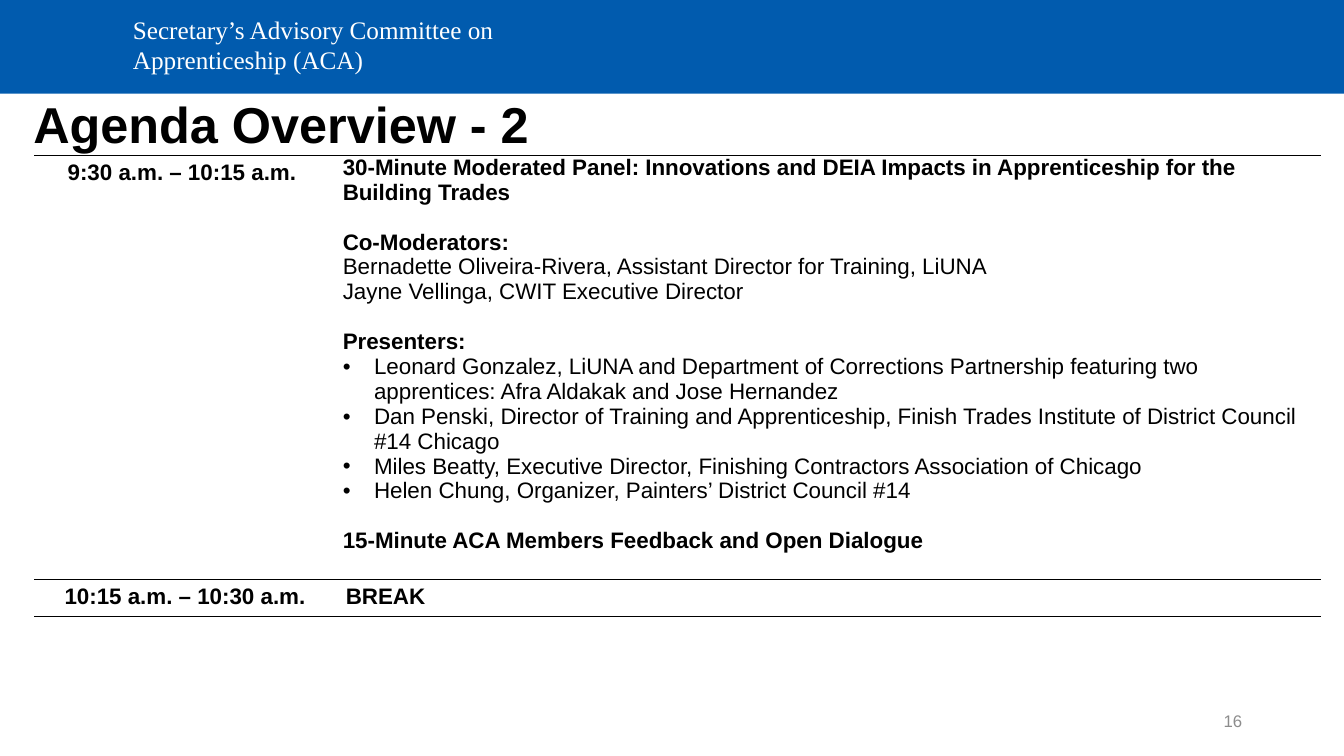
from lxml import etree
from pptx import Presentation
from pptx.dml.color import RGBColor
from pptx.enum.shapes import MSO_SHAPE
from pptx.enum.text import MSO_ANCHOR, MSO_AUTO_SIZE, PP_ALIGN
from pptx.oxml.ns import qn
from pptx.util import Inches, Pt

BLUE = RGBColor(0x01, 0x5B, 0xAE)
WHITE = RGBColor(0xFF, 0xFF, 0xFF)
BLACK = RGBColor(0x00, 0x00, 0x00)
GRAY = RGBColor(0x8C, 0x8C, 0x8C)
PLAIN_TABLE_STYLE = "{2D5ABB26-0587-4C30-8999-92F81FD0307C}"

# Each group: bold heading, plain lines, bulleted lines
PANEL = [
    ("30-Minute Moderated Panel: Innovations and DEIA Impacts in "
     "Apprenticeship for the Building Trades", [], []),
    ("Co-Moderators:", [
        "Bernadette Oliveira-Rivera, Assistant Director for Training, LiUNA",
        "Jayne Vellinga, CWIT Executive Director",
    ], []),
    ("Presenters:", [], [
        "Leonard Gonzalez, LiUNA and Department of Corrections Partnership "
        "featuring two apprentices: Afra Aldakak and Jose Hernandez",
        "Dan Penski, Director of Training and Apprenticeship, Finish Trades "
        "Institute of District Council #14 Chicago",
        "Miles Beatty, Executive Director, Finishing Contractors Association of Chicago",
        "Helen Chung, Organizer, Painters’ District Council #14",
    ]),
    ("15-Minute ACA Members Feedback and Open Dialogue", [], []),
]


def add_run(paragraph, text, size, color, bold=False, font="Arial"):
    run = paragraph.add_run()
    run.text = text
    run.font.name = font
    run.font.size = Pt(size)
    run.font.bold = bold
    run.font.color.rgb = color


def add_label(slide, box, text, size, color, font="Arial",
              align=PP_ALIGN.LEFT, anchor=MSO_ANCHOR.TOP):
    frame = slide.shapes.add_textbox(*map(Inches, box)).text_frame
    frame.word_wrap = True
    frame.vertical_anchor = anchor
    frame.paragraphs[0].alignment = align
    add_run(frame.paragraphs[0], text, size, color, font=font)


def add_banner(slide, width):
    banner = slide.shapes.add_shape(MSO_SHAPE.RECTANGLE, 0, 0, width, Inches(0.93))
    banner.shadow.inherit = False
    banner.fill.solid()
    banner.fill.fore_color.rgb = BLUE
    banner.line.fill.background()
    add_label(slide, (1.22, 0.09, 3.87, 0.71),
              "Secretary’s Advisory Committee on Apprenticeship (ACA)",
              18, WHITE, font="Times New Roman")


def add_title(slide, text):
    title = slide.shapes.title
    title.left, title.top = Inches(0.23), Inches(0.87)
    title.width, title.height = Inches(11.76), Inches(0.79)
    frame = title.text_frame
    frame.auto_size = MSO_AUTO_SIZE.NONE
    frame.vertical_anchor = MSO_ANCHOR.MIDDLE
    heading = frame.paragraphs[0]
    heading.alignment = PP_ALIGN.LEFT
    heading.line_spacing = 0.9
    add_run(heading, text, 36, BLACK, bold=True)


def style_cell(cell):
    cell.fill.solid()
    cell.fill.fore_color.rgb = WHITE
    properties = cell._tc.get_or_add_tcPr()
    # Fill at 20% opacity
    fill_color = properties.find(qn("a:solidFill"))[0]
    etree.SubElement(fill_color, qn("a:alpha"), val="20000")
    # Rules above and below, placed ahead of the fill
    for position, side in enumerate(("a:lnT", "a:lnB")):
        rule = etree.Element(qn(side), w=str(Pt(1)))
        ink = etree.SubElement(rule, qn("a:solidFill"))
        etree.SubElement(ink, qn("a:srgbClr"), val=str(BLACK))
        properties.insert(position, rule)


def add_bullet(paragraph):
    properties = paragraph._p.get_or_add_pPr()
    properties.set("marL", str(Inches(0.31)))
    properties.set("indent", str(Inches(-0.31)))
    etree.SubElement(properties, qn("a:buFont"), typeface="Arial")
    etree.SubElement(properties, qn("a:buChar"), char="•")


def fill_panel(cell):
    cell.margin_left = cell.margin_right = Inches(0.07)
    cell.margin_top = cell.margin_bottom = 0
    frame = cell.text_frame
    for index, (heading, lines, bullets) in enumerate(PANEL):
        paragraph = frame.add_paragraph() if index else frame.paragraphs[0]
        if index:
            paragraph.space_before = Pt(17.8)
        add_run(paragraph, heading, 16, BLACK, bold=True)
        for line in lines:
            add_run(frame.add_paragraph(), line, 16, BLACK)
        for presenter in bullets:
            paragraph = frame.add_paragraph()
            add_bullet(paragraph)
            add_run(paragraph, presenter, 16, BLACK)


def add_agenda(slide):
    agenda = slide.shapes.add_table(2, 2, Inches(0.34), Inches(1.54),
                                    Inches(12.76), Inches(4.3)).table
    agenda.first_row = agenda.horz_banding = False
    agenda._tbl.tblPr.find(qn("a:tableStyleId")).text = PLAIN_TABLE_STYLE
    for column, width in zip(agenda.columns, (2.99, 9.77)):
        column.width = Inches(width)
    for row, height in zip(agenda.rows, (3.95, 0.35)):
        row.height = Inches(height)
    for cell in agenda.iter_cells():
        style_cell(cell)

    # Time slots
    for row, slot in enumerate(("9:30 a.m. – 10:15 a.m. ", "10:15 a.m. – 10:30 a.m.")):
        time = agenda.cell(row, 0).text_frame.paragraphs[0]
        time.alignment = PP_ALIGN.CENTER
        add_run(time, slot, 16, BLACK, bold=True)

    # Sessions
    fill_panel(agenda.cell(0, 1))
    add_run(agenda.cell(1, 1).text_frame.paragraphs[0], "BREAK", 16, BLACK, bold=True)


def main():
    deck = Presentation()
    deck.slide_width, deck.slide_height = Inches(13.33), Inches(7.5)
    slide = deck.slides.add_slide(deck.slide_layouts[5])
    add_banner(slide, deck.slide_width)
    add_title(slide, "Agenda Overview - 2")
    add_label(slide, (9.42, 6.95, 3, 0.4), "16", 12, GRAY,
              align=PP_ALIGN.RIGHT, anchor=MSO_ANCHOR.MIDDLE)
    add_agenda(slide)
    deck.save("out.pptx")


if __name__ == "__main__":
    main()
